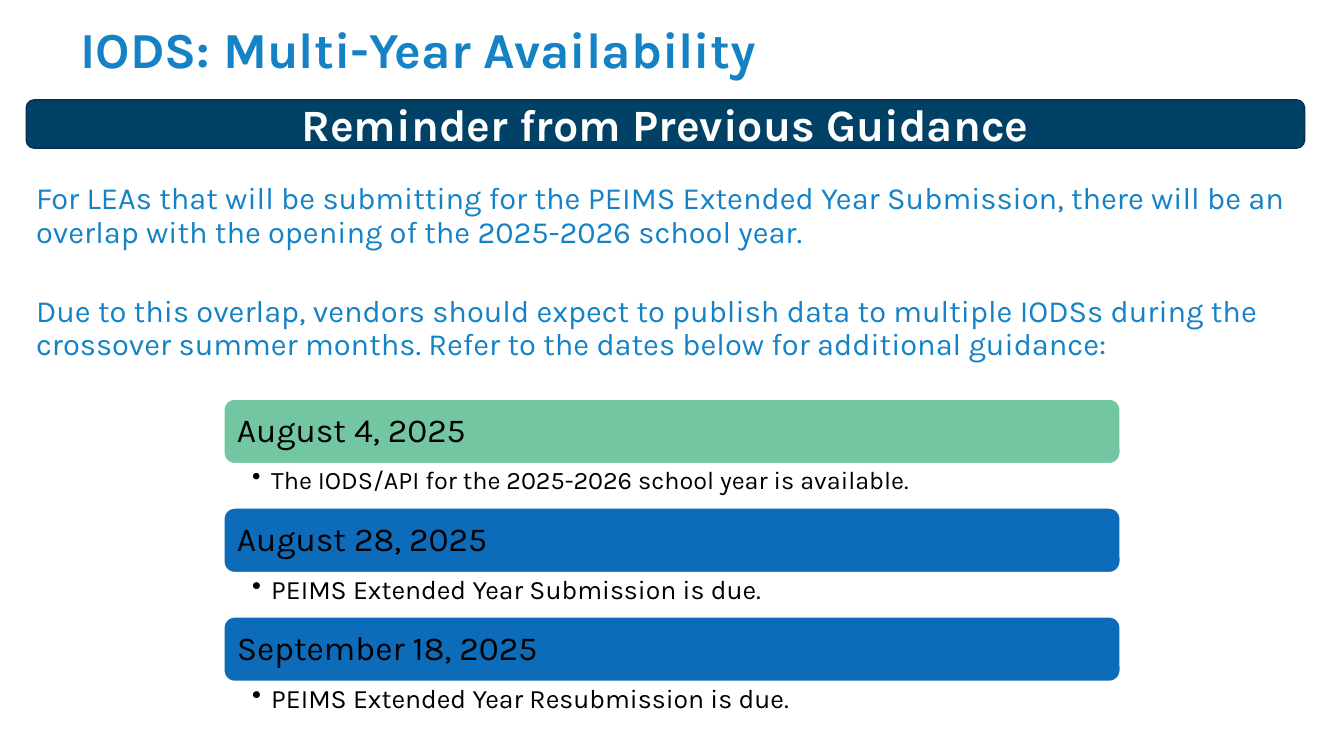
"""Build the slide on multi-year IODS availability."""
from lxml.etree import SubElement
from pptx import Presentation
from pptx.dml.color import RGBColor
from pptx.enum.shapes import MSO_SHAPE
from pptx.enum.text import MSO_ANCHOR, PP_ALIGN
from pptx.oxml.ns import qn
from pptx.util import Inches, Pt


def color(code):
    return RGBColor.from_string(code)


def write(shape, lines, size, code, bold=False, anchor=MSO_ANCHOR.MIDDLE, space=0.9):
    frame = shape.text_frame
    frame.word_wrap = True
    frame.vertical_anchor = anchor
    frame.text = "\n".join(lines)
    for para in frame.paragraphs:
        para.alignment = PP_ALIGN.LEFT
        para.line_spacing = space
        for run in para.runs:
            run.font.name = "Karla"
            run.font.size = Pt(size)
            run.font.bold = bold
            run.font.color.rgb = color(code)
    return frame


deck = Presentation()
deck.slide_width, deck.slide_height = Inches(13.33), Inches(7.5)
slide = deck.slides.add_slide(deck.slide_layouts[6])
shapes = slide.shapes

edge, wide = Inches(0.26), Inches(12.68)
left, width = Inches(2.22), Inches(8.89)
top, step, bar_high, note_high = 3.96, 1.08, 0.64, 0.43

title = shapes.add_textbox(Inches(0.7), Inches(0.11), Inches(11.59), Inches(0.82))
write(title, ["IODS: Multi-Year Availability"], 36, "1482C5", bold=True)

body = shapes.add_textbox(edge, Inches(1.77), wide, Inches(2.1))
frame = write(body, [
    "For LEAs that will be submitting for the PEIMS Extended Year Submission, "
    "there will be an overlap with the opening of the 2025-2026 school year.",
    "Due to this overlap, vendors should expect to publish data to multiple IODSs "
    "during the crossover summer months. Refer to the dates below for additional guidance:",
], 22, "1482C5", anchor=MSO_ANCHOR.TOP)
frame.paragraphs[1].space_before = Pt(32.6)

dates = [
    ("August 4, 2025", "72C6A2", "The IODS/API for the 2025-2026 school year is available.", 18),
    ("August 28, 2025", "0D6CB9", "PEIMS Extended Year Submission is due.", 19),
    ("September 18, 2025", "0D6CB9", "PEIMS Extended Year Resubmission is due.", 19),
]
for row, (date, fill, text, size) in enumerate(dates):
    y = top + row * step
    bar = shapes.add_shape(MSO_SHAPE.ROUNDED_RECTANGLE, left, Inches(y), width, Inches(bar_high))
    bar.shadow.inherit = False
    bar.fill.solid()
    bar.fill.fore_color.rgb = color(fill)
    bar.line.color.rgb = color("FFFFFF")
    bar.line.width = Pt(1)
    write(bar, [date], 24, "000000")

    note = shapes.add_textbox(left, Inches(y + bar_high + 0.01), width, Inches(note_high))
    frame = write(note, [text], size, "000000", anchor=MSO_ANCHOR.TOP)
    frame.margin_left, frame.margin_right = Inches(0.28), Inches(0.14)
    frame.margin_top = frame.margin_bottom = Inches(0.03)
    props = frame.paragraphs[0]._p.get_or_add_pPr()
    props.set("marL", str(Inches(0.19)))
    props.set("indent", str(-Inches(0.19)))
    SubElement(props, qn("a:buChar")).set("char", "•")

banner = shapes.add_shape(MSO_SHAPE.ROUNDED_RECTANGLE, edge, Inches(0.99), wide, Inches(0.48))
banner.shadow.inherit = False
banner.fill.solid()
banner.fill.fore_color.rgb = color("004165")
banner.line.color.rgb = color("062F51")
banner.line.width = Pt(1)
frame = write(banner, ["Reminder from Previous Guidance"], 32, "FFFFFF", bold=True, space=1.0)
frame.paragraphs[0].alignment = PP_ALIGN.CENTER

deck.save("out.pptx")
